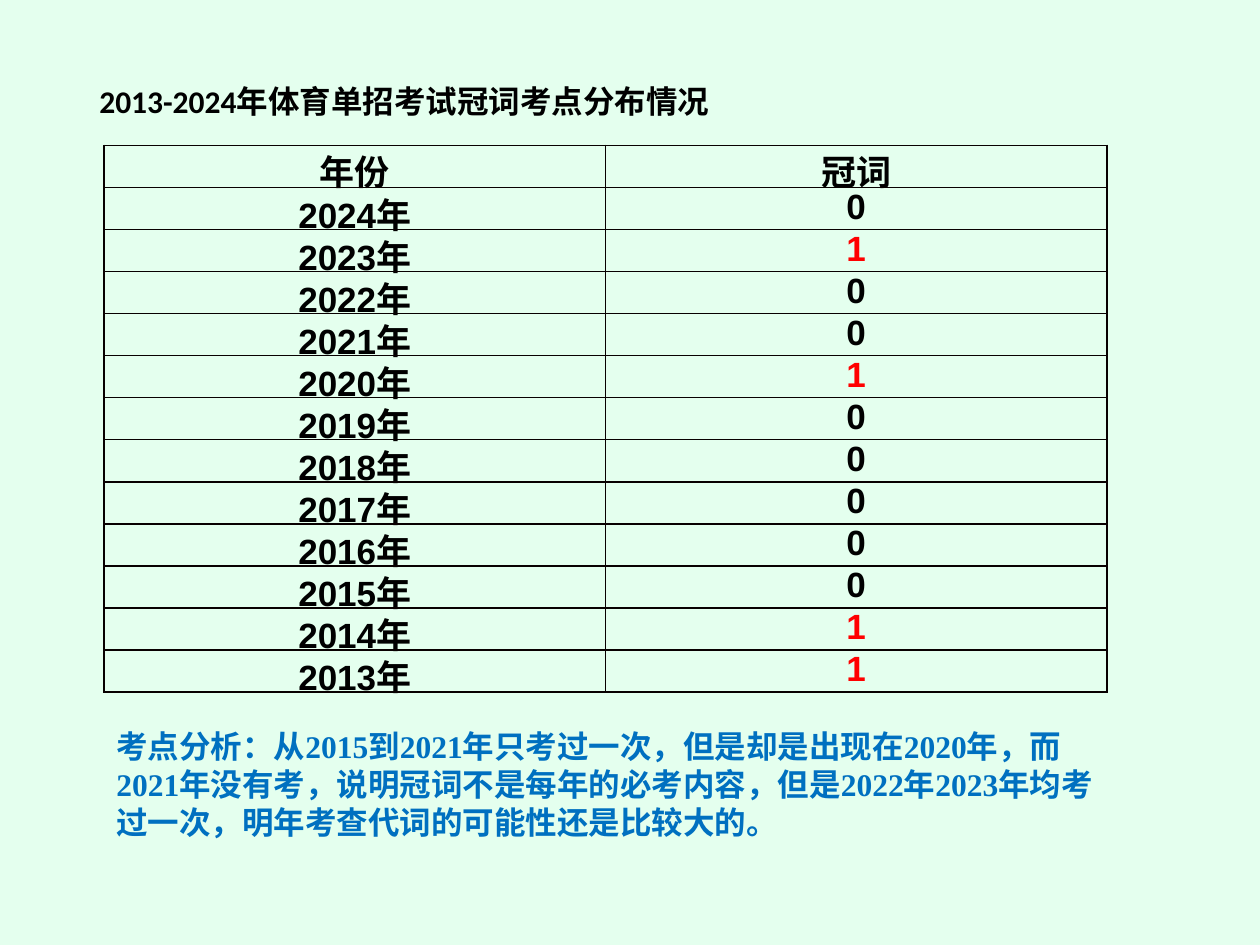
import pptx
import pptx.util
import pptx.dml.color
import pptx.enum.text
import pptx.oxml
import pptx.oxml.ns
from lxml import etree

Pt = pptx.util.Pt
COLORS = {
    "background": "E4FFEE",
    "text": "000000",
    "tested": "FF0000",
    "analysis": "0070C0",
    "border": "080000",
}
EAST_ASIAN_FONT = "Noto Sans CJK SC"
TESTED_YEARS = {2023, 2020, 2014, 2013}


def write_text(text_frame, text, font_name, size, color, alignment):
    text_frame.text = text
    paragraph = text_frame.paragraphs[0]
    paragraph.alignment = alignment
    for font in (paragraph.font, paragraph.runs[0].font):
        font.name = font_name
    paragraph.font.size = Pt(size)
    paragraph.font.bold = True
    paragraph.font.color.rgb = pptx.dml.color.RGBColor.from_string(COLORS[color])
    run_properties = paragraph.runs[0].font._element
    east_asian = etree.SubElement(run_properties, pptx.oxml.ns.qn("a:ea"))
    east_asian.set("typeface", EAST_ASIAN_FONT)


def add_borders(cell, width):
    properties = cell._tc.get_or_add_tcPr()
    for position, side in enumerate(("lnL", "lnR", "lnT", "lnB")):
        line = pptx.oxml.parse_xml(
            f'<a:{side} {pptx.oxml.ns.nsdecls("a")} w="{Pt(width)}"><a:solidFill>'
            f'<a:srgbClr val="{COLORS["border"]}"/></a:solidFill></a:{side}>'
        )
        properties.insert(position, line)


presentation = pptx.Presentation()
presentation.slide_width, presentation.slide_height = Pt(720), Pt(540)
slide = presentation.slides.add_slide(presentation.slide_layouts[5])
slide.background.fill.solid()
slide.background.fill.fore_color.rgb = pptx.dml.color.RGBColor.from_string(
    COLORS["background"]
)
CENTER = pptx.enum.text.PP_ALIGN.CENTER
LEFT = pptx.enum.text.PP_ALIGN.LEFT
TOP = pptx.enum.text.MSO_ANCHOR.TOP

# Title
title = slide.shapes.title
title.left, title.top, title.width, title.height = Pt(31), Pt(43.2), Pt(400), Pt(29)
title.text_frame.auto_size = pptx.enum.text.MSO_AUTO_SIZE.SHAPE_TO_FIT_TEXT
title.text_frame.vertical_anchor = TOP
write_text(title.text_frame, "2013-2024年体育单招考试冠词考点分布情况",
           "Calibri", 18, "text", CENTER)

# Questions per year
rows = [("年份", "冠词")]
for year in range(2024, 2012, -1):
    rows.append((f"{year}年", "1" if year in TESTED_YEARS else "0"))

table_frame = slide.shapes.add_table(len(rows), 2, Pt(59.5), Pt(83), Pt(573), Pt(312))
table = table_frame.table
table.first_row = False
table.horz_banding = False
for row_index, row in enumerate(rows):
    table.rows[row_index].height = Pt(17.28)
    for column_index, text in enumerate(row):
        cell = table.cell(row_index, column_index)
        cell.margin_left = cell.margin_right = Pt(5)
        cell.margin_top = cell.margin_bottom = 0
        cell.vertical_anchor = TOP
        cell.fill.background()
        add_borders(cell, 1)
        write_text(cell.text_frame, text,
                   EAST_ASIAN_FONT if row_index == 0 else "Arial", 20,
                   "tested" if text == "1" else "text", CENTER)
table_frame.height = Pt(312)

# Analysis
analysis = slide.shapes.add_textbox(Pt(59.5), Pt(412), Pt(573), Pt(73))
analysis.text_frame.word_wrap = True
analysis.text_frame.auto_size = pptx.enum.text.MSO_AUTO_SIZE.SHAPE_TO_FIT_TEXT
write_text(
    analysis.text_frame,
    "考点分析：从2015到2021年只考过一次，但是却是出现在2020年，"
    "而2021年没有考，说明冠词不是每年的必考内容，但是2022年2023年均考过一次，"
    "明年考查代词的可能性还是比较大的。",
    "Times New Roman", 18, "analysis", LEFT,
)

presentation.save("out.pptx")
